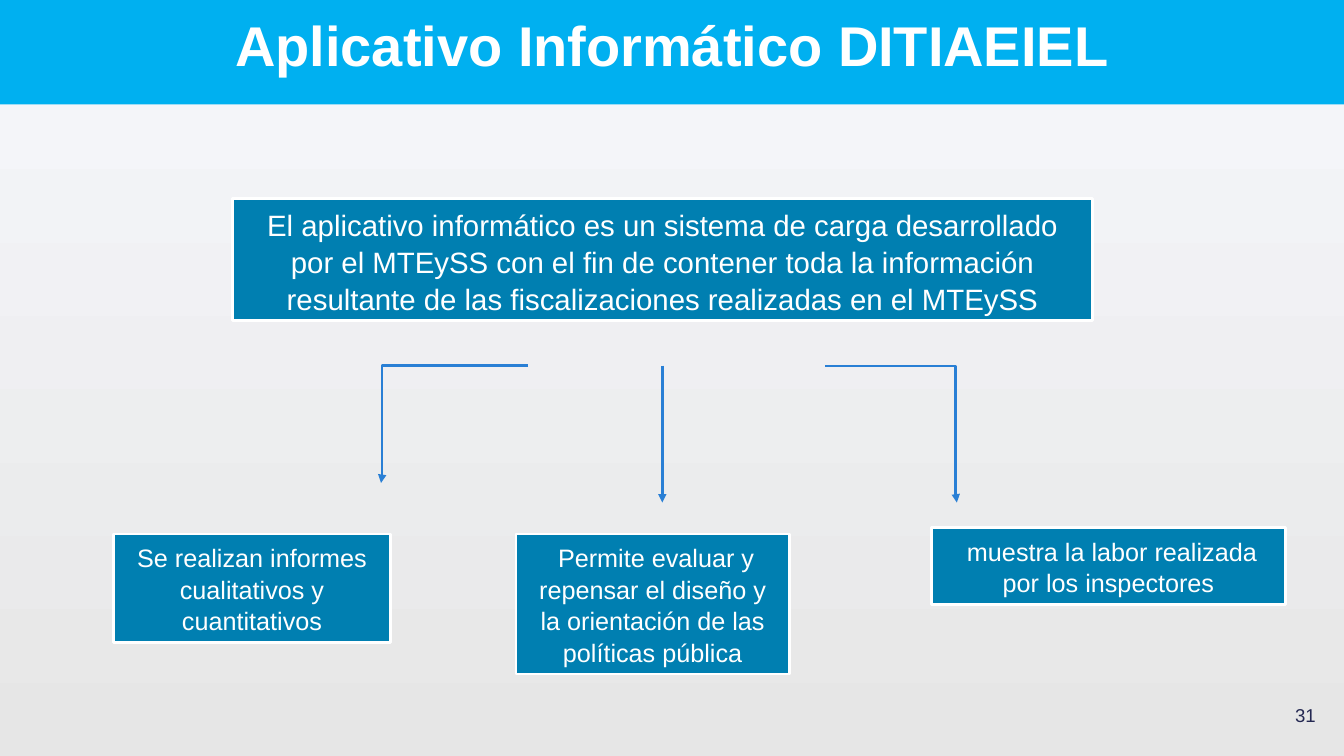
from lxml import etree
from pptx import Presentation
from pptx.dml.color import RGBColor
from pptx.enum.shapes import MSO_CONNECTOR, MSO_SHAPE
from pptx.enum.text import MSO_ANCHOR, PP_ALIGN
from pptx.oxml.ns import qn
from pptx.util import Pt

RECT = MSO_SHAPE.RECTANGLE
LINE, ELBOW = MSO_CONNECTOR.STRAIGHT, MSO_CONNECTOR.ELBOW
TOP, MIDDLE = MSO_ANCHOR.TOP, MSO_ANCHOR.MIDDLE
CENTER, RIGHT = PP_ALIGN.CENTER, PP_ALIGN.RIGHT

FONT = "Arial"
COLORS = {"band": "00B0F0", "box": "007FB1", "white": "FFFFFF",
          "arrow": "297FD5", "number": "242852",
          "light": "F6F7FB", "gray": "E6E6E6"}


def color(name):
    return RGBColor.from_string(COLORS[name])


class Deck:
    def __init__(self, width, height):
        self.show = Presentation()
        self.show.slide_width, self.show.slide_height = Pt(width), Pt(height)
        self.slide = self.show.slides.add_slide(self.show.slide_layouts[6])

    def back(self, stops):
        fill = self.slide.background.fill
        fill.gradient()
        fill.gradient_angle = 270
        for stop, (place, name) in zip(fill.gradient_stops, stops):
            stop.position = place
            stop.color.rgb = color(name)

    def text(self, shape, words, size, ink="white", bold=False, align=CENTER,
             anchor=TOP, inset=(7.2, 7.2), space=1.0):
        frame = shape.text_frame
        frame.text = words
        frame.word_wrap = True
        frame.vertical_anchor = anchor
        frame.margin_left = frame.margin_right = Pt(inset[0])
        frame.margin_top = frame.margin_bottom = Pt(inset[1])
        for para in frame.paragraphs:
            para.alignment = align
            para.line_spacing = space
            for run in para.runs:
                run.font.name, run.font.size = FONT, Pt(size)
                run.font.bold = bold
                run.font.color.rgb = color(ink)

    def rect(self, place, fill):
        shape = self.slide.shapes.add_shape(RECT, *map(Pt, place))
        shape.shadow.inherit = False
        shape.fill.solid()
        shape.fill.fore_color.rgb = color(fill)
        shape.line.fill.background()
        return shape

    def title(self, words, place):
        self.text(self.rect(place, "band"), words, 40, bold=True)

    def box(self, words, place, size):
        shape = self.rect(place, "box")
        shape.line.color.rgb = color("white")
        shape.line.width = Pt(2)
        self.text(shape, words, size, inset=(9.6, 4.8), space=1.05)

    def label(self, words, place, size):
        shape = self.slide.shapes.add_textbox(*map(Pt, place))
        self.text(shape, words, size, "number", align=RIGHT, anchor=MIDDLE)

    def arrow(self, kind, start, end):
        link = self.slide.shapes.add_connector(kind, *map(Pt, start + end))
        link.line.color.rgb = color("arrow")
        link.line.width = Pt(2)
        props = link._element.spPr
        etree.SubElement(props.find(qn("a:ln")), qn("a:tailEnd"), type="triangle")
        etree.SubElement(props, qn("a:effectLst"))
        if kind == ELBOW:  # turn down close to the far end
            guides = props.find(qn("a:prstGeom")).find(qn("a:avLst"))
            etree.SubElement(guides, qn("a:gd"), name="adj1", fmla="val 99300")


def main():
    deck = Deck(960, 540)
    deck.back([(0.03, "light"), (1, "gray")])
    deck.title("Aplicativo Informático DITIAEIEL", (0, 0, 960, 74.6))
    deck.label("31", (889, 490, 58, 41), 13.3)
    deck.box("El aplicativo informático es un sistema de carga desarrollado "
             "por el MTEySS con el fin de contener toda la información "
             "resultante de las fiscalizaciones realizadas en el MTEySS",
             (165.9, 142, 614.7, 87), 21)
    for words, place in [
        ("Se realizan informes cualitativos y cuantitativos",
         (81, 381.5, 198, 77.5)),
        (" Permite evaluar y repensar el diseño y la orientación de las "
         "políticas pública", (368.6, 381.5, 195.1, 100)),
        (" muestra la labor realizada por los inspectores",
         (665.4, 377, 252.8, 54.6)),
    ]:
        deck.box(words, place, 18)
    deck.arrow(ELBOW, (377.3, 261.2), (272.2, 345))
    deck.arrow(ELBOW, (589.5, 261.5), (683.5, 359))
    deck.arrow(LINE, (473.1, 261.2), (473.1, 359))
    deck.show.save("out.pptx")


if __name__ == "__main__":
    main()
